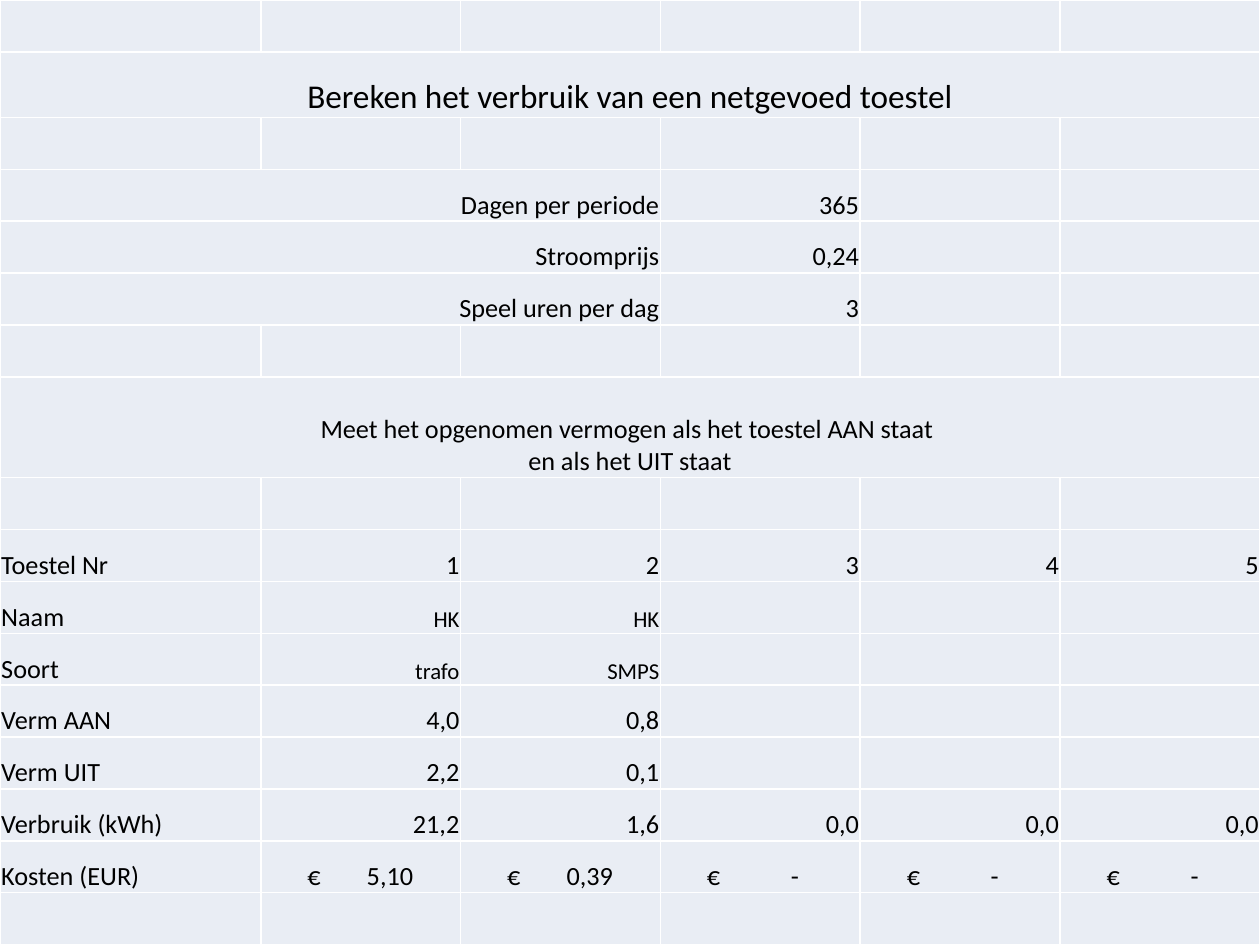
from dataclasses import dataclass

from lxml import etree
from pptx import Presentation
from pptx import util as u
from pptx.dml.color import RGBColor
from pptx.enum import text
from pptx.oxml import ns

COLORS = {"cell": "E9EDF4", "grid": "FFFFFF", "ink": "000000"}
LEFT, CENTER, RIGHT = text.PP_ALIGN.LEFT, text.PP_ALIGN.CENTER, text.PP_ALIGN.RIGHT

COLUMNS, ROWS = 6, 17
WIDTH, HEIGHT = 10, 7.5
LABEL_WIDTH = 2.07
TALL_ROWS = {1: 0.52, 7: 0.8}
COST_INDENT = 0.37
AMOUNT_STOP, DASH_STOP = 0.84, 0.73


@dataclass
class Entry:
    row: int
    column: int
    wording: str
    align: text.PP_ALIGN = RIGHT
    size: int = 15
    span: int = 1
    indent: float = 0.01
    tab_stop: float = 0


HEADINGS = [
    Entry(1, 0, "Bereken het verbruik van een netgevoed toestel", CENTER, 19, COLUMNS),
    Entry(7, 0, "Meet het opgenomen vermogen als het toestel AAN staat \ven als het UIT staat",
          CENTER, span=COLUMNS),
]
SETTINGS = [("Dagen per periode", "365"), ("Stroomprijs", "0,24"), ("Speel uren per dag", "3")]
SETTINGS_ROW = 3
DEVICES = [
    ("Toestel Nr", 15, ["1", "2", "3", "4", "5"]),
    ("Naam", 13, ["HK", "HK"]),
    ("Soort", 13, ["trafo", "SMPS"]),
    ("Verm AAN", 15, ["4,0", "0,8"]),
    ("Verm UIT", 15, ["2,2", "0,1"]),
    ("Verbruik (kWh)", 15, ["21,2", "1,6", "0,0", "0,0", "0,0"]),
]
DEVICES_ROW = 9
COSTS = ["5,10", "0,39", "-", "-", "-"]
COSTS_ROW = DEVICES_ROW + len(DEVICES)


def style_cell(cell) -> None:
    """Give a cell its fill and a thin line on all four sides."""
    cell.fill.solid()
    cell.fill.fore_color.rgb = RGBColor.from_string(COLORS["cell"])
    properties = cell._tc.get_or_add_tcPr()
    for position, side in enumerate(("lnL", "lnR", "lnT", "lnB")):
        line = etree.Element(ns.qn(f"a:{side}"), w=str(u.Pt(1)))
        fill = etree.SubElement(line, ns.qn("a:solidFill"))
        etree.SubElement(fill, ns.qn("a:srgbClr"), val=COLORS["grid"])
        properties.insert(position, line)


def add_right_tab(paragraph, stop: float) -> None:
    tabs = etree.SubElement(paragraph._p.get_or_add_pPr(), ns.qn("a:tabLst"))
    etree.SubElement(tabs, ns.qn("a:tab"), pos=str(u.Inches(stop)), algn="r")


def write_entry(table, entry: Entry) -> None:
    cell = table.cell(entry.row, entry.column)
    if entry.span > 1:
        cell.merge(table.cell(entry.row, entry.column + entry.span - 1))
    cell.vertical_anchor = text.MSO_ANCHOR.BOTTOM
    cell.margin_left = u.Inches(entry.indent)
    cell.margin_right = cell.margin_top = u.Inches(0.01)
    cell.margin_bottom = 0
    paragraph = cell.text_frame.paragraphs[0]
    paragraph.text = entry.wording
    paragraph.alignment = entry.align
    if entry.tab_stop:
        add_right_tab(paragraph, entry.tab_stop)
    for run in paragraph.runs:
        run.font.name = "Calibri"
        run.font.size = u.Pt(entry.size)
        run.font.color.rgb = RGBColor.from_string(COLORS["ink"])


def sheet_entries() -> list[Entry]:
    entries = list(HEADINGS)
    for row, (label, value) in enumerate(SETTINGS, SETTINGS_ROW):
        entries += [Entry(row, 0, label, span=3), Entry(row, 3, value)]
    for row, (label, size, values) in enumerate(DEVICES, DEVICES_ROW):
        entries.append(Entry(row, 0, label, LEFT))
        entries += [Entry(row, column, value, size=size)
                    for column, value in enumerate(values, 1)]
    entries.append(Entry(COSTS_ROW, 0, "Kosten (EUR)", LEFT))
    for column, cost in enumerate(COSTS, 1):
        stop = DASH_STOP if cost == "-" else AMOUNT_STOP
        entries.append(Entry(COSTS_ROW, column, f"€\t{cost}", LEFT,
                             indent=COST_INDENT, tab_stop=stop))
    return entries


def add_sheet(slide):
    table = slide.shapes.add_table(ROWS, COLUMNS, 0, 0, u.Inches(WIDTH), u.Inches(HEIGHT)).table
    table.first_row = table.horz_banding = False
    device_width = (WIDTH - LABEL_WIDTH) / (COLUMNS - 1)
    for index, column in enumerate(table.columns):
        column.width = u.Inches(device_width if index else LABEL_WIDTH)
    row_height = (HEIGHT - sum(TALL_ROWS.values())) / (ROWS - len(TALL_ROWS))
    for index, row in enumerate(table.rows):
        row.height = u.Inches(TALL_ROWS.get(index, row_height))
    for cell in table.iter_cells():
        style_cell(cell)
    return table


def main() -> None:
    deck = Presentation()
    deck.slide_width, deck.slide_height = u.Inches(WIDTH), u.Inches(HEIGHT)
    slide = deck.slides.add_slide(deck.slide_layouts[6])
    sheet = add_sheet(slide)
    for entry in sheet_entries():
        write_entry(sheet, entry)
    deck.save("out.pptx")


if __name__ == "__main__":
    main()
